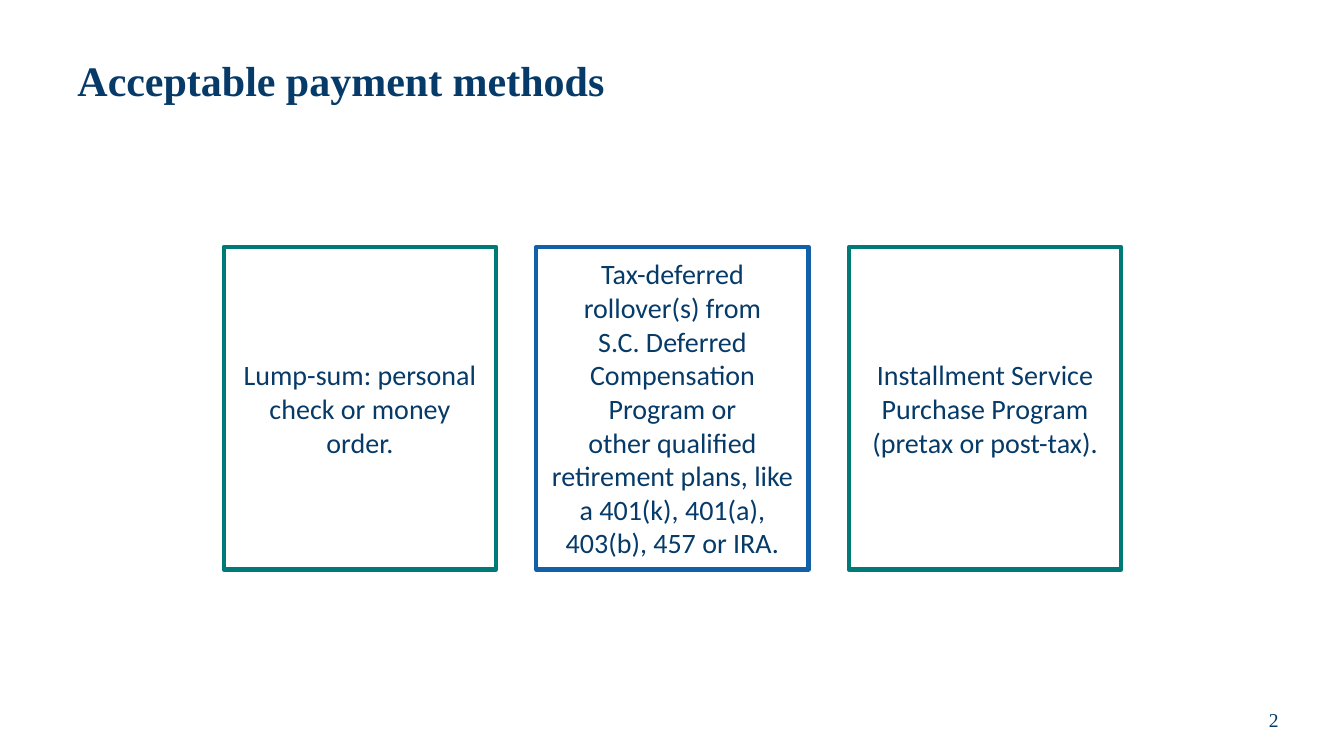
from dataclasses import dataclass

from pptx import Presentation
from pptx.dml.color import RGBColor
from pptx.enum.shapes import MSO_SHAPE
from pptx.enum.text import MSO_ANCHOR, PP_ALIGN
from pptx.util import Inches, Pt

RECTANGLE = MSO_SHAPE.RECTANGLE
MIDDLE = MSO_ANCHOR.MIDDLE
LEFT, CENTER = PP_ALIGN.LEFT, PP_ALIGN.CENTER


@dataclass(frozen=True)
class Theme:
    navy: RGBColor = RGBColor.from_string("063A68")
    teal: RGBColor = RGBColor.from_string("007A77")
    blue: RGBColor = RGBColor.from_string("1260A7")
    heading_font: str = "Times New Roman"
    body_font: str = "Calibri"
    title_size: int = 30
    body_size: int = 20
    number_size: int = 14
    border_width: int = 3


theme = Theme()


def write(sp, lines, font, size, align, bold=False):
    tf = sp.text_frame
    tf.word_wrap = True
    tf.vertical_anchor = MIDDLE
    tf.text = "\n".join(lines)
    for p in tf.paragraphs:
        p.alignment = align
        for r in p.runs:
            r.font.name = font
            r.font.size = Pt(size)
            r.font.bold = bold
            r.font.color.rgb = theme.navy
    return tf


prs = Presentation()
prs.slide_width, prs.slide_height = Inches(13.33), Inches(7.5)
s = prs.slides.add_slide(prs.slide_layouts[6])

# Title
sp = s.shapes.add_textbox(Inches(0.67), Inches(0.25), Inches(12), Inches(1.15))
tf = write(sp, ["Acceptable payment methods"], theme.heading_font,
           theme.title_size, LEFT, bold=True)
tf.paragraphs[0].line_spacing = 0.9

# Payment method cards, evenly spaced from left to right
cards = [
    (theme.teal, ["Lump-sum: personal check or money order."]),
    (theme.blue, ["Tax-deferred rollover(s) from",
                  "S.C. Deferred Compensation Program or",
                  "other qualified retirement plans, like a 401(k), 401(a), "
                  "403(b), 457 or IRA."]),
    (theme.teal, ["Installment Service Purchase Program (pretax or post-tax)."]),
]
card_left, card_top, card_width, card_height = 2.22, 2.45, 2.7, 3.2
card_gap = 0.4
for i, (color, lines) in enumerate(cards):
    left = card_left + i * (card_width + card_gap)
    sp = s.shapes.add_shape(RECTANGLE, Inches(left), Inches(card_top),
                            Inches(card_width), Inches(card_height))
    sp.shadow.inherit = False
    sp.fill.background()
    sp.line.color.rgb = color
    sp.line.width = Pt(theme.border_width)
    tf = write(sp, lines, theme.body_font, theme.body_size, CENTER)
    tf.margin_left = tf.margin_right = Inches(0.1)
    tf.margin_top = tf.margin_bottom = Inches(0.1)

# Slide number
sp = s.shapes.add_textbox(Inches(12.05), Inches(6.89), Inches(1.17), Inches(0.5))
write(sp, ["2"], theme.heading_font, theme.number_size, CENTER)

prs.save("out.pptx")
